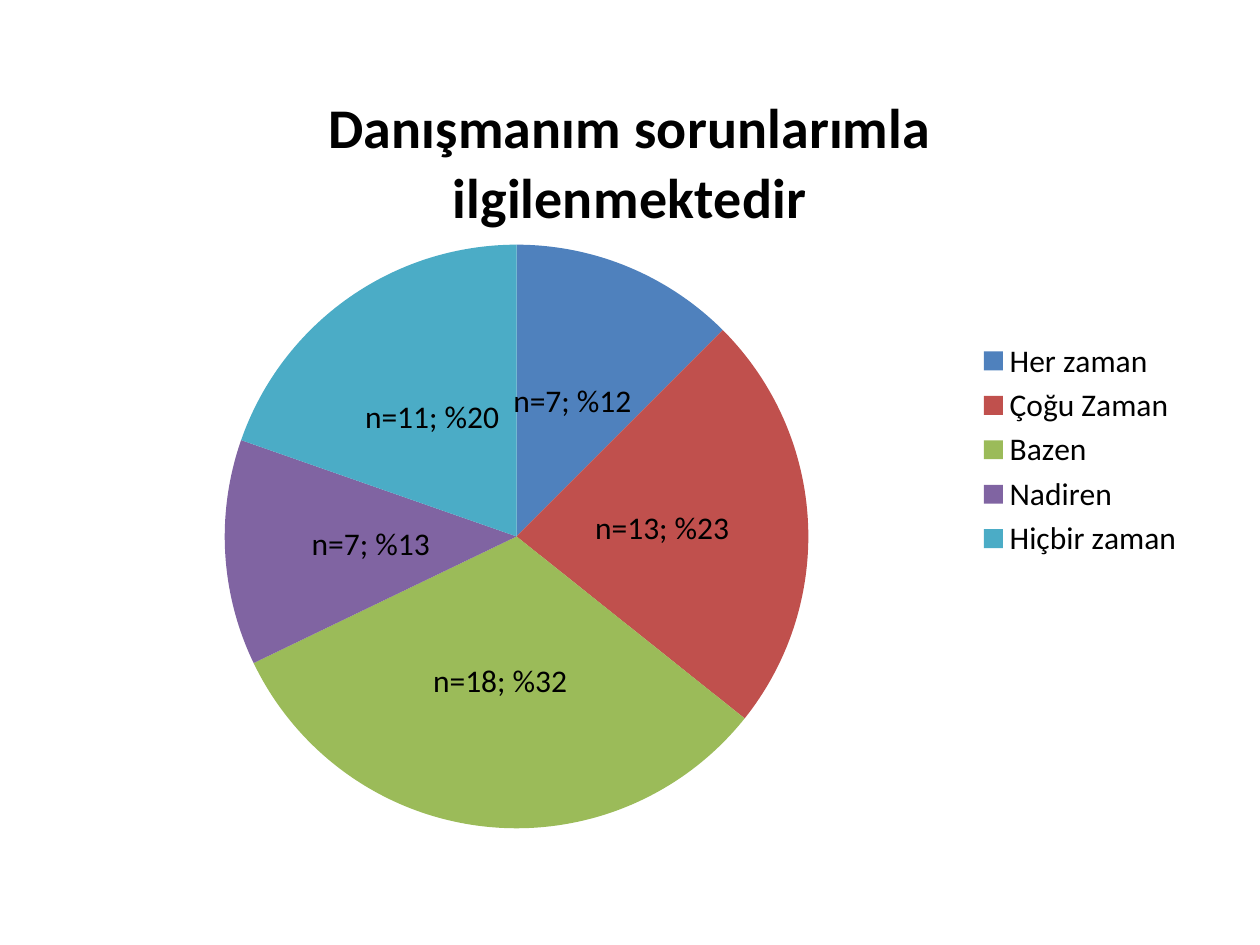
from pptx import Presentation
from pptx.chart.data import CategoryChartData
from pptx.dml.color import RGBColor
from pptx.enum.chart import XL_CHART_TYPE as ChartType
from pptx.enum.chart import XL_LABEL_POSITION as LabelPosition
from pptx.enum.chart import XL_LEGEND_POSITION as LegendPosition
from pptx.oxml import parse_xml
from pptx.oxml.ns import nsdecls, qn
from pptx.util import Inches, Pt

BLACK = RGBColor(0x00, 0x00, 0x00)
BLUE = RGBColor(0x4F, 0x81, 0xBD)
RED = RGBColor(0xC0, 0x50, 0x4D)
GREEN = RGBColor(0x9B, 0xBB, 0x59)
PURPLE = RGBColor(0x80, 0x64, 0xA2)
TEAL = RGBColor(0x4B, 0xAC, 0xC6)

QUESTION = "Danışmanım sorunlarımla ilgilenmektedir"
# Answer, count, percent, colour
ANSWERS = [
    ("Her zaman", 7, 12, BLUE),
    ("Çoğu Zaman", 13, 23, RED),
    ("Bazen", 18, 32, GREEN),
    ("Nadiren", 7, 13, PURPLE),
    ("Hiçbir zaman", 11, 20, TEAL),
]


def write_text(frame, text, size=18, bold=False):
    frame.text = text
    para = frame.paragraphs[0]
    for font in (para.font, para.runs[0].font):
        font.name = "Calibri"
        font.size = Pt(size)
        font.bold = bold
        font.color.rgb = BLACK


deck = Presentation()
deck.slide_width = Inches(10)
deck.slide_height = Inches(7.5)
page = deck.slides.add_slide(deck.slide_layouts[6])

# Pie chart
data = CategoryChartData()
data.categories = [answer[0] for answer in ANSWERS]
data.add_series(QUESTION, [answer[1] for answer in ANSWERS])
chart = page.shapes.add_chart(
    ChartType.PIE, Inches(0.5), Inches(0.44), Inches(9), Inches(6.26), data
).chart
chart.font.name = "Calibri"
chart.font.size = Pt(18)
chart.font.color.rgb = BLACK

# Title and legend
chart.has_title = True
write_text(chart.chart_title.text_frame, QUESTION, size=32, bold=True)
chart.chart_title.include_in_layout = False
chart.has_legend = True
chart.legend.position = LegendPosition.RIGHT
chart.legend.include_in_layout = False

# Slices and their labels
plot = chart.plots[0]
plot.vary_by_categories = True
series = plot.series[0]
labels = series.data_labels
labels.show_value = True
labels.show_percentage = True
labels.position = LabelPosition.CENTER
for index, (name, count, percent, colour) in enumerate(ANSWERS):
    point = series.points[index]
    point.format.fill.solid()
    point.format.fill.fore_color.rgb = colour
    write_text(point.data_label.text_frame, f"n={count}; %{percent}")
    point.data_label.position = LabelPosition.CENTER

# Place of the pie, as fractions of the chart
plot_area = chart.element.find(qn("c:chart")).find(qn("c:plotArea"))
for layout in plot_area.findall(qn("c:layout")):
    plot_area.remove(layout)
plot_area.insert(0, parse_xml(
    f'<c:layout {nsdecls("c")}><c:manualLayout><c:layoutTarget val="inner"/>'
    '<c:xMode val="edge"/><c:yMode val="edge"/><c:x val="0.14"/><c:y val="0.24"/>'
    '<c:w val="0.52"/><c:h val="0.74"/></c:manualLayout></c:layout>'
))

deck.save("out.pptx")
